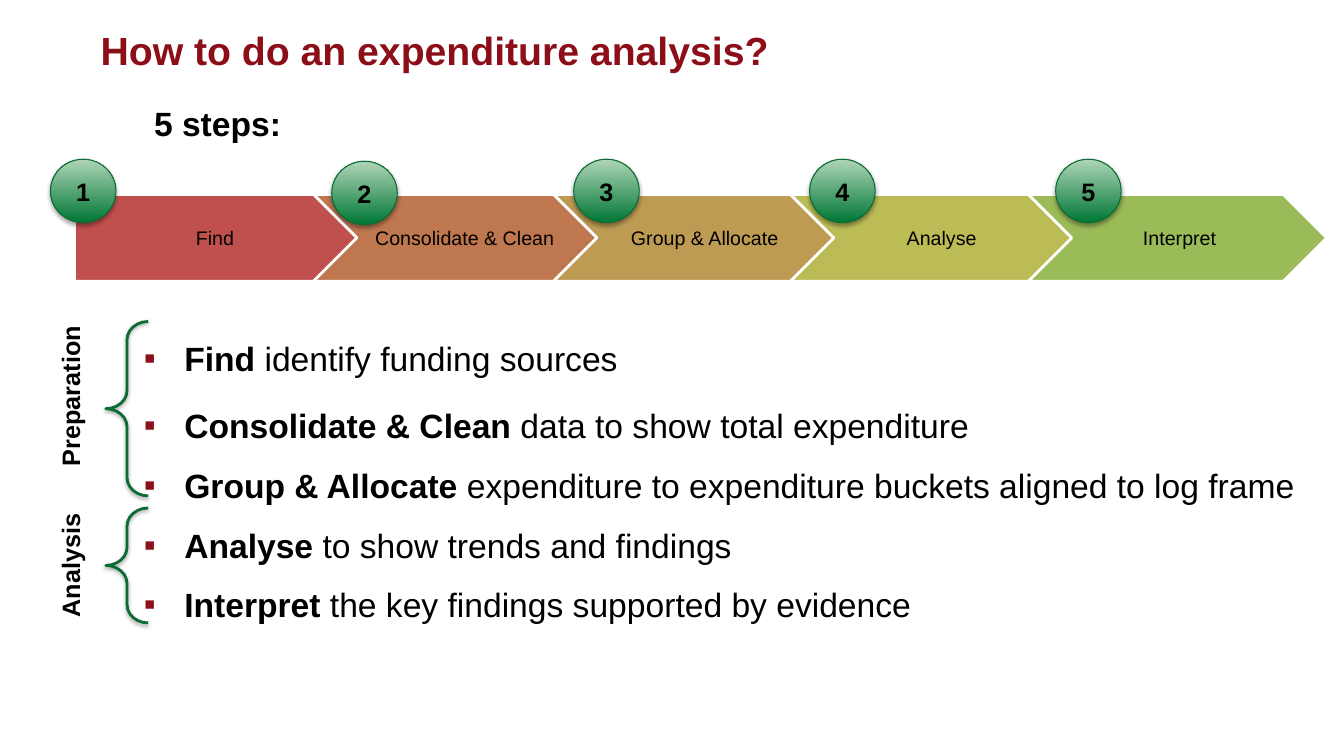
from lxml.etree import SubElement
from pptx import Presentation
from pptx.dml.color import RGBColor
from pptx.enum.shapes import MSO_SHAPE
from pptx.enum.text import MSO_ANCHOR, PP_ALIGN
from pptx.oxml.ns import qn
from pptx.util import Inches, Pt

COLORS = {
    "title": "8B0E18", "text": "000000", "white": "FFFFFF", "brace": "0B6C36",
    "ring": "086C35", "dark": "007735", "light": "AFD5B7",
}
STEPS = [
    ("Find", 0.74, 0.5, 1.58, "C0504D"),
    ("Consolidate & Clean", 3.11, 3.29, 1.6, "BF7750"),
    ("Group & Allocate", 5.49, 5.69, 1.58, "BD9B53"),
    ("Analyse", 7.84, 8.03, 1.58, "BCBC56"),
    ("Interpret", 10.2, 10.47, 1.58, "9BBB59"),
]
BULLETS = [
    ("Find ", "identify funding sources", 0),
    ("Consolidate & Clean ", "data to show total expenditure", 12),
    ("Group & Allocate ", "expenditure to expenditure buckets aligned to log frame", 6.3),
    ("Analyse", " to show trends and findings", 6.3),
    ("Interpret ", "the key findings supported by evidence", 6.3),
]
PHASES = [("Preparation", 3.93, 3.19, 1.73), ("Analysis", 5.61, 5.04, 1.14)]


def rgb(value):
    return RGBColor.from_string(value)


def add_text(para, text, size=18, bold=False, color=COLORS["text"], align=None):
    span = para.add_run()
    span.text = text
    span.font.name = "Arial"
    span.font.size = Pt(size)
    span.font.bold = bold
    span.font.color.rgb = rgb(color)
    if align is not None:
        para.alignment = align


class StepsPage:
    """Slide with the shared style of the expenditure steps."""

    def __init__(self, deck):
        self.page = deck.slides.add_slide(deck.slide_layouts[6])

    def box(self, left, top, width, height):
        box = self.page.shapes.add_textbox(*map(Inches, (left, top, width, height)))
        box.text_frame.word_wrap = True
        return box

    def label(self, text, left, top, width, height, rotation=0, **style):
        box = self.box(left, top, width, height)
        box.rotation = rotation
        box.text_frame.vertical_anchor = MSO_ANCHOR.MIDDLE
        add_text(box.text_frame.paragraphs[0], text, bold=True, **style)

    def shape(self, kind, left, top, width, height, line, weight):
        shape = self.page.shapes.add_shape(kind, *map(Inches, (left, top, width, height)))
        shape.shadow.inherit = False
        shape.line.color.rgb = rgb(line)
        shape.line.width = Pt(weight)
        return shape

    def drop_shadow(self, shape, distance, opacity):
        effects = shape.element.spPr.find(qn("a:effectLst"))
        shadow = SubElement(effects, qn("a:outerShdw"), blurRad=str(Pt(3.1)),
                            dist=str(Pt(distance)), dir="5400000", rotWithShape="0")
        color = SubElement(shadow, qn("a:srgbClr"), val=COLORS["text"])
        SubElement(color, qn("a:alpha"), val=str(opacity * 1000))

    def arrow(self, text, left, fill, first):
        kind = MSO_SHAPE.PENTAGON if first else MSO_SHAPE.CHEVRON
        arrow = self.shape(kind, left, 1.93, 2.96, 0.86, COLORS["white"], 2)
        arrow.fill.solid()
        arrow.fill.fore_color.rgb = rgb(fill)
        frame = arrow.text_frame
        frame.margin_left, frame.margin_right = Inches(0.06), Inches(0.02)
        frame.vertical_anchor = MSO_ANCHOR.MIDDLE
        add_text(frame.paragraphs[0], text, size=14, align=PP_ALIGN.CENTER)

    def badge(self, number, left, top):
        badge = self.shape(MSO_SHAPE.OVAL, left, top, 0.65, 0.63, COLORS["ring"], 0.75)
        badge.fill.gradient()
        badge.fill.gradient_angle = 90
        for stop, name in zip(badge.fill.gradient_stops, ("dark", "light")):
            stop.color.rgb = rgb(COLORS[name])
        self.drop_shadow(badge, 1.8, 35)
        badge.text_frame.vertical_anchor = MSO_ANCHOR.MIDDLE
        add_text(badge.text_frame.paragraphs[0], str(number), bold=True, align=PP_ALIGN.CENTER)

    def brace(self, top, height):
        brace = self.shape(MSO_SHAPE.LEFT_BRACE, 1.05, top, 0.42, height, COLORS["brace"], 2)
        brace.fill.background()
        brace.adjustments[0] = 0.429
        self.drop_shadow(brace, 1.6, 38)

    def bullets(self, items):
        frame = self.box(0.9, 3.3, 12.1, 2.93).text_frame
        for index, (lead, rest, before) in enumerate(items):
            para = frame.add_paragraph() if index else frame.paragraphs[0]
            para.space_before, para.space_after = Pt(before), Pt(7.5)
            add_text(para, lead, size=24, bold=True)
            add_text(para, rest, size=24)
            layout = para._p.get_or_add_pPr()
            layout.set("marL", str(Inches(0.83)))
            layout.set("indent", str(Inches(-0.4)))
            color = SubElement(layout, qn("a:buClr"))
            SubElement(color, qn("a:srgbClr"), val=COLORS["title"])
            SubElement(layout, qn("a:buFont"), typeface="Arial")
            SubElement(layout, qn("a:buChar"), char="▪")


def main():
    deck = Presentation()
    deck.slide_width, deck.slide_height = Inches(13.33), Inches(7.5)
    steps = StepsPage(deck)
    steps.label("How to do an expenditure analysis?", 0.9, 0.27, 11.51, 0.45,
                size=28, color=COLORS["title"])
    steps.label("5 steps:", 1.43, 0.98, 3, 0.48, size=24)
    steps.bullets(BULLETS)
    for index, (name, left, _, _, fill) in enumerate(STEPS):
        steps.arrow(name, left, fill, index == 0)
    for name, middle, top, height in PHASES:
        steps.label(name, -0.45, middle - 0.2, 2.29, 0.4, rotation=270, align=PP_ALIGN.CENTER)
        steps.brace(top, height)
    for number, (_, _, left, top, _) in enumerate(STEPS, 1):
        steps.badge(number, left, top)
    deck.save("out.pptx")


if __name__ == "__main__":
    main()
